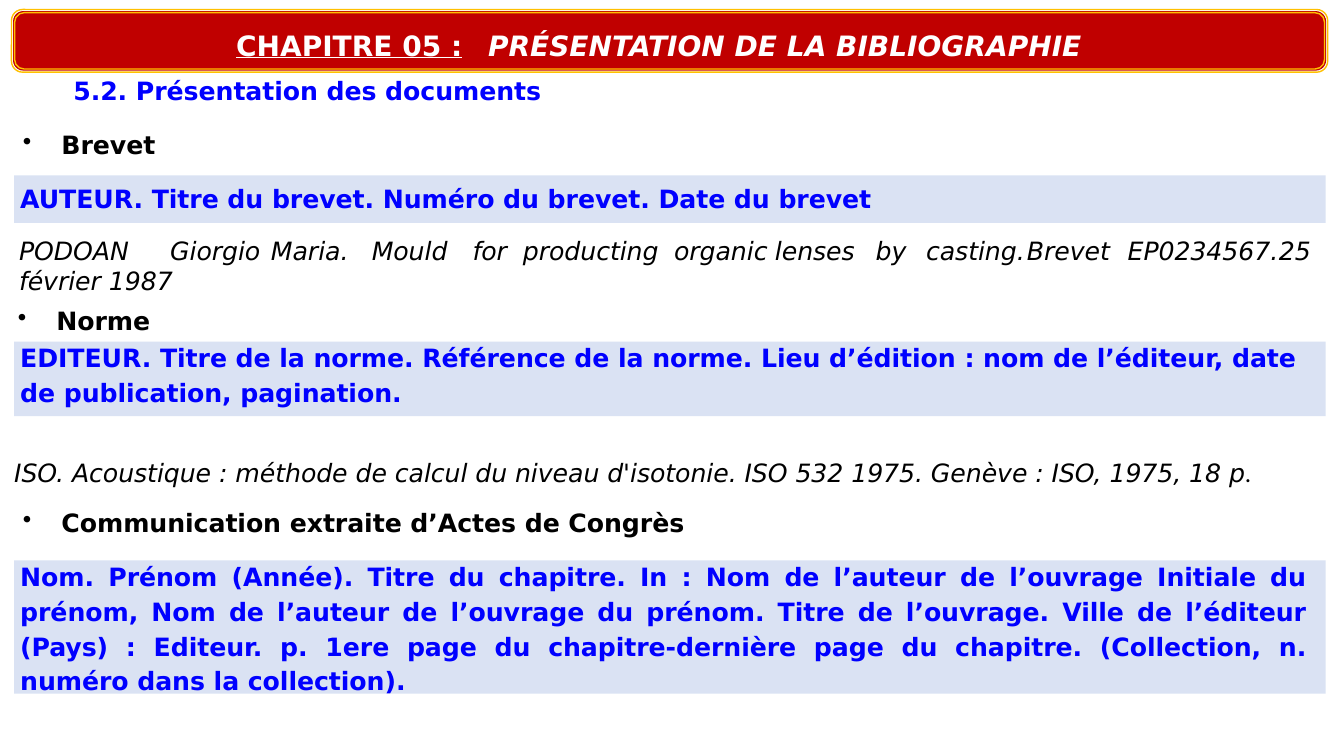
import pptx
import pptx.dml.color
import pptx.enum.shapes
import pptx.enum.text
import pptx.oxml.ns
import pptx.util
from lxml import etree

Cm, Pt = pptx.util.Cm, pptx.util.Pt
SHAPE = pptx.enum.shapes.MSO_SHAPE
ALIGN = pptx.enum.text.PP_ALIGN
FONT = "DejaVu Sans"
BLUE, BLACK, WHITE = "0000FF", "000000", "FFFFFF"
RED, GOLD, PALE = "C00000", "FFC000", "DAE2F3"

# Tab stops that spread the words of the patent example, in cm
PATENT_TABS = [3.33, 6.02, 8.43, 10.72, 12.04, 15.85,
               18.59, 21.01, 22.17, 25.12, 27.61, 31.85]


def color(value):
    return pptx.dml.color.RGBColor.from_string(value)


def add_block(s, kind, left, top, width, height, fill=None, line=None):
    sp = s.shapes.add_shape(kind, Cm(left), Cm(top), Cm(width), Cm(height))
    sp.shadow.inherit = False
    if fill:
        sp.fill.solid()
        sp.fill.fore_color.rgb = color(fill)
    else:
        sp.fill.background()
    if line:
        sp.line.color.rgb = color(line)
        sp.line.width = Pt(1)
    else:
        sp.line.fill.background()
    return sp


def add_text_frame(s, left, top, width, height):
    sp = s.shapes.add_textbox(Cm(left), Cm(top), Cm(width), Cm(height))
    tf = sp.text_frame
    tf.word_wrap = True
    tf.margin_left = tf.margin_right = tf.margin_bottom = 0
    tf.margin_top = Cm(0.03)
    return tf


def set_font(font, size, value, bold=False, italic=False):
    font.name = FONT
    font.size = Pt(size)
    font.color.rgb = color(value)
    font.bold = bold
    font.italic = italic


def set_layout(p, margin=0, indent=0, right=0, bullet=False, tabs=()):
    pPr = p._p.get_or_add_pPr()
    for name, length in (("marL", margin), ("marR", right), ("indent", indent)):
        pPr.set(name, str(Cm(length)))
    items = []
    if bullet:
        items.append(etree.Element(pptx.oxml.ns.qn("a:buChar"), char="•"))
    if tabs:
        tab_list = etree.Element(pptx.oxml.ns.qn("a:tabLst"))
        for stop in tabs:
            etree.SubElement(tab_list, pptx.oxml.ns.qn("a:tab"),
                             pos=str(Cm(stop)), algn="l")
        items.append(tab_list)
    # Bullets and tabs come before the default run properties
    defaults = pPr.find(pptx.oxml.ns.qn("a:defRPr"))
    for item in items:
        defaults.addprevious(item)


def add_header(s, left, top, width, height):
    # Red band inside two thin gold frames
    for inset, fill, line in ((0.04, RED, None), (0, None, GOLD), (0.08, None, GOLD)):
        h = height - 2 * inset
        sp = add_block(s, SHAPE.ROUNDED_RECTANGLE, left + inset, top + inset,
                       width - 2 * inset, h, fill, line)
        sp.adjustments[0] = (0.28 - inset / 2) / h
    # Title
    tf = add_text_frame(s, left + 5.63, top + 0.45, 21.95, 0.91)
    p = tf.paragraphs[0]
    p.space_before = Pt(1)
    set_font(p.font, 20, WHITE, bold=True)
    set_layout(p, margin=0.03, tabs=[6.35])
    for text, is_label in (("CHAPITRE 05 :", True),
                           ("\tPRÉSENTATION DE LA BIBLIOGRAPHIE", False)):
        r = p.add_run()
        r.text = text
        r.font.underline = is_label
        r.font.italic = not is_label


def add_bands(s, left, width, rows):
    for top, height in rows:
        add_block(s, SHAPE.RECTANGLE, left, top, width, height, PALE)


def add_paragraph(tf, text, before, style, line_spacing=None, **layout):
    p = tf.paragraphs[0] if not tf.text else tf.add_paragraph()
    p.text = text
    p.space_before = Pt(before)
    if line_spacing:
        p.line_spacing = line_spacing
    set_font(p.font, 18, **style)
    set_layout(p, **layout)
    for r in p.runs:
        r._r.get_or_add_rPr().set("spc", "-5")
    return p


def add_body(s, left, top, width, height):
    tf = add_text_frame(s, left, top, width, height)
    rule = {"value": BLUE, "bold": True}
    topic = {"value": BLACK, "bold": True}
    example = {"value": BLACK, "italic": True}

    add_paragraph(tf, "5.2. Présentation des documents", 1, rule, margin=1.52)

    # Patent
    add_paragraph(tf, "Brevet", 16.6, topic, margin=1.22, indent=-0.97, bullet=True)
    add_paragraph(tf, "AUTEUR. Titre du brevet. Numéro du brevet. Date du brevet",
                  17.1, rule, margin=0.18)
    add_paragraph(tf, "PODOAN\tGiorgio\tMaria.\tMould\tfor\tproducting\torganic\t"
                  "lenses\tby\tcasting.\tBrevet\tEP0234567.\t25\vfévrier 1987",
                  15.1, example, margin=0.15, tabs=PATENT_TABS)

    # Standard
    add_paragraph(tf, "Norme", 7.2, topic, margin=1.09, indent=-0.97, bullet=True)
    add_paragraph(tf, "EDITEUR. Titre de la norme. Référence de la norme. "
                  "Lieu d’édition : nom de l’éditeur, date de publication, pagination.",
                  1.5, rule, line_spacing=1.15, margin=0.18)
    p = add_paragraph(tf, "ISO. Acoustique : méthode de calcul du niveau d'isotonie. "
                      "ISO 532 1975. Genève : ISO, 1975, 18 p", 35.5, example, margin=0.03)
    r = p.add_run()
    r.text = "."
    r.font.name = "Calibri"

    # Conference paper
    add_paragraph(tf, "Communication extraite d’Actes de Congrès", 14.4, topic,
                  margin=1.22, indent=-0.97, bullet=True)
    p = add_paragraph(tf, "Nom. Prénom (Année). Titre du chapitre. In : Nom de l’auteur "
                      "de l’ouvrage Initiale du prénom, Nom de l’auteur de l’ouvrage du "
                      "prénom. Titre de l’ouvrage. Ville de l’éditeur (Pays) : Editeur. "
                      "p. 1ere page du chapitre-dernière page du chapitre. (Collection, "
                      "n. numéro dans la collection).",
                      13.8, rule, line_spacing=1.15, margin=0.18, right=0.48)
    p.alignment = ALIGN.JUSTIFY


def main():
    prs = pptx.Presentation()
    prs.slide_width, prs.slide_height = Cm(33.87), Cm(19.05)
    s = prs.slides.add_slide(prs.slide_layouts[6])
    add_header(s, 0.29, 0.24, 33.17, 1.58)
    add_bands(s, 0.36, 33.05, [(4.42, 1.2), (8.61, 1.88), (14.12, 3.36)])
    add_body(s, 0.33, 1.88, 33.07, 15.67)
    prs.save("out.pptx")


if __name__ == "__main__":
    main()
